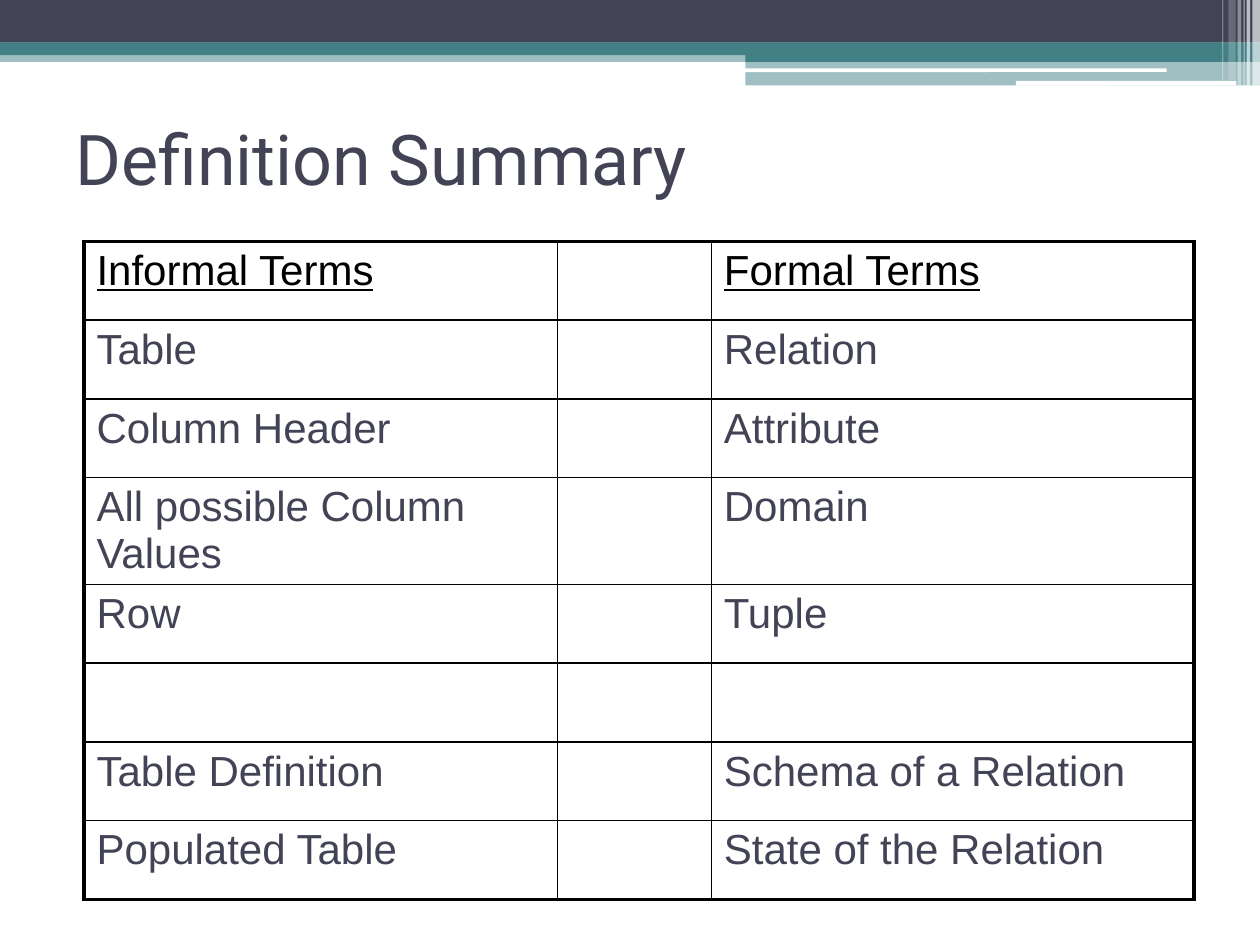
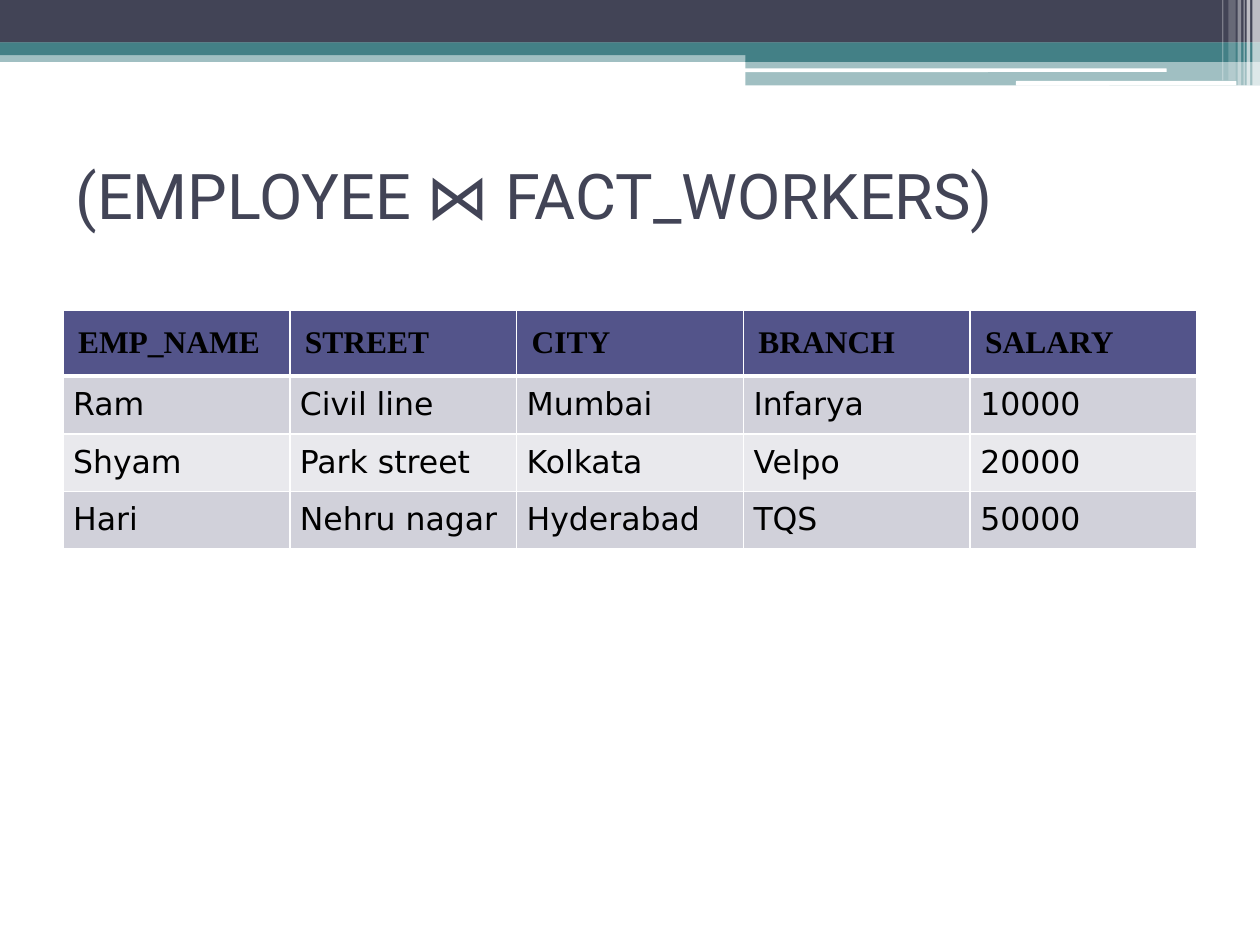
from dataclasses import dataclass
from typing import NamedTuple

from lxml import etree
from pptx import Presentation
from pptx.dml.color import RGBColor
from pptx.enum import shapes, text
from pptx.oxml import ns
from pptx.util import Pt

COLORS = {
    "slate": "424456",
    "teal": "438086",
    "white": "FFFFFF",
    "black": "000000",
    "indigo": "53548A",
    "band_dark": "D1D1DA",
    "band_light": "E9E9ED",
}
SLIDE_WIDTH, SLIDE_HEIGHT = 720, 540
TITLE_FONT = "Roboto"
TITLE_LEFT, TITLE_WIDTH, TITLE_HEIGHT = 36, 648, 84


class Band(NamedTuple):
    left: float
    top: float
    width: float
    height: float
    color: str
    opacity: int = 100
    rounded: bool = False


class Strip(NamedTuple):
    left: float
    width: float
    height: float
    opacity: int


class Edge(NamedTuple):
    color: str
    width: float


@dataclass
class TextStyle:
    font: str
    size: float
    color: str
    bold: bool = False
    underline: bool = False


@dataclass
class CellStyle:
    text: TextStyle
    margin_x: float
    margin_y: float
    fill: str | None = None


HEADER_BANDS = [
    Band(0, 28.8, SLIDE_WIDTH, 6.6, "teal", 50),
    Band(0, 0, SLIDE_WIDTH, 24.4, "slate"),
    Band(0, 24.3, SLIDE_WIDTH, 7.2, "teal"),
    Band(426, 28.2, 294, 7.2, "teal"),
    Band(426, 34.8, 294, 14, "teal", 50),
    Band(425.5, 39.1, 241.2, 2.1, "white", rounded=True),
    Band(580.5, 46.3, 126, 2.6, "white", rounded=True),
]
CORNER_STRIPS = [
    Strip(715.6, 4.4, 49, 65),
    Strip(712.4, 2, 49, 65),
    Strip(710.6, 0.7, 49, 60),
    Strip(707.2, 2, 49, 40),
    Strip(702, 4.2, 46, 20),
    Strip(698.4, 0.7, 46, 30),
]

TERMS = [
    ("Informal Terms", "Formal Terms"),
    ("Table", "Relation"),
    ("Column Header", "Attribute"),
    ("All possible Column Values", "Domain"),
    ("Row", "Tuple"),
    ("", ""),
    ("Table Definition", "Schema of a Relation"),
    ("Populated Table", "State of the Relation"),
]
WORKERS = [
    ("EMP_NAME", "STREET", "CITY", "BRANCH", "SALARY"),
    ("Ram", "Civil line", "Mumbai", "Infarya", "10000"),
    ("Shyam", "Park street", "Kolkata", "Velpo", "20000"),
    ("Hari", "Nehru nagar", "Hyderabad", "TQS", "50000"),
]

TERM_HEADING = CellStyle(TextStyle("Arial", 24, "black", underline=True), 7.2, 3.6)
TERM_ENTRY = CellStyle(TextStyle("Arial", 24, "slate"), 7.2, 3.6)
WORKER_HEADING = CellStyle(
    TextStyle("Times New Roman", 18, "black", bold=True), 8.6, 8.6, "indigo")
WORKER_TEXT = TextStyle("DejaVu Sans", 18, "black")
WORKER_ROWS = [CellStyle(WORKER_TEXT, 5.8, 5.8, fill)
               for fill in ("band_dark", "band_light")]


def rgb(color: str) -> RGBColor:
    return RGBColor.from_string(COLORS[color])


def add_run(paragraph, wording: str, style: TextStyle) -> None:
    run = paragraph.add_run()
    run.text = wording
    run.font.name = style.font
    run.font.size = Pt(style.size)
    run.font.bold = style.bold
    run.font.underline = style.underline
    run.font.color.rgb = rgb(style.color)


def add_band(slide, band: Band) -> None:
    kind = (shapes.MSO_SHAPE.ROUNDED_RECTANGLE if band.rounded
            else shapes.MSO_SHAPE.RECTANGLE)
    bar = slide.shapes.add_shape(
        kind, Pt(band.left), Pt(band.top), Pt(band.width), Pt(band.height))
    bar.shadow.inherit = False
    bar.line.fill.background()
    bar.fill.solid()
    bar.fill.fore_color.rgb = rgb(band.color)
    if band.opacity < 100:
        fill_color = bar.fill._xPr.find(".//" + ns.qn("a:srgbClr"))
        etree.SubElement(fill_color, ns.qn("a:alpha"), val=str(band.opacity * 1000))


def add_titled_slide(deck, heading: str, size: float, top: float,
                     bottom_margin: float = 3.6):
    """Add a slide with the shared header bands and a left-aligned title."""
    slide = deck.slides.add_slide(deck.slide_layouts[5])
    for band in HEADER_BANDS:
        add_band(slide, band)
    for strip in CORNER_STRIPS:
        add_band(slide, Band(strip.left, 0, strip.width, strip.height,
                             "white", strip.opacity))
    title = slide.shapes.title
    title.left, title.top = Pt(TITLE_LEFT), Pt(top)
    title.width, title.height = Pt(TITLE_WIDTH), Pt(TITLE_HEIGHT)
    frame = title.text_frame
    frame.auto_size = text.MSO_AUTO_SIZE.NONE
    frame.vertical_anchor = text.MSO_ANCHOR.MIDDLE
    frame.margin_bottom = Pt(bottom_margin)
    frame.paragraphs[0].alignment = text.PP_ALIGN.LEFT
    add_run(frame.paragraphs[0], heading, TextStyle(TITLE_FONT, size, "slate"))
    return slide


def set_borders(cell, left: Edge, right: Edge, top: Edge, bottom: Edge) -> None:
    properties = cell._tc.get_or_add_tcPr()
    sides = zip(("a:lnL", "a:lnR", "a:lnT", "a:lnB"), (left, right, top, bottom))
    for position, (tag, edge) in enumerate(sides):
        line = etree.Element(ns.qn(tag), w=str(Pt(edge.width)))
        fill = etree.SubElement(line, ns.qn("a:solidFill"))
        etree.SubElement(fill, ns.qn("a:srgbClr"), val=COLORS[edge.color])
        properties.insert(position, line)


def fill_cell(cell, wording: str, style: CellStyle) -> None:
    cell.margin_left = cell.margin_right = Pt(style.margin_x)
    cell.margin_top = cell.margin_bottom = Pt(style.margin_y)
    if style.fill:
        cell.fill.solid()
        cell.fill.fore_color.rgb = rgb(style.fill)
    else:
        cell.fill.background()
    if wording:
        add_run(cell.text_frame.paragraphs[0], wording, style.text)


def add_grid(slide, left: float, top: float, widths: list[float],
             heights: list[float]):
    grid = slide.shapes.add_table(
        len(heights), len(widths), Pt(left), Pt(top),
        Pt(sum(widths)), Pt(sum(heights))).table
    grid.first_row = grid.horz_banding = False
    for column, width in zip(grid.columns, widths):
        column.width = Pt(width)
    for row, height in zip(grid.rows, heights):
        row.height = Pt(height)
    return grid


def build_definition_summary(deck) -> None:
    slide = add_titled_slide(deck, "Definition Summary", 40, 48.2)
    heights = [61 if informal.startswith("All") else 45 for informal, _ in TERMS]
    grid = add_grid(slide, 48, 138, [270.7, 87.8, 275.8], heights)
    outer, inner = Edge("black", 2.25), Edge("black", 1)
    last_row, last_column = len(TERMS) - 1, 2
    for r, (informal, formal) in enumerate(TERMS):
        for c, wording in enumerate((informal, "", formal)):
            cell = grid.cell(r, c)
            fill_cell(cell, wording, TERM_ENTRY if r else TERM_HEADING)
            set_borders(cell,
                        left=inner if c else outer,
                        right=outer if c == last_column else inner,
                        top=inner if r else outer,
                        bottom=outer if r == last_row else inner)


def build_join_result(deck) -> None:
    slide = add_titled_slide(deck, "(EMPLOYEE ⋈ FACT_WORKERS)", 36, 90,
                             bottom_margin=45)
    grid = add_grid(slide, 36, 177.4, [129.6] * 5, [37.5, 33, 33, 33])
    thin, thick = Edge("white", 1), Edge("white", 3)
    for r, record in enumerate(WORKERS):
        style = WORKER_ROWS[(r - 1) % 2] if r else WORKER_HEADING
        for c, wording in enumerate(record):
            cell = grid.cell(r, c)
            fill_cell(cell, wording, style)
            set_borders(cell, left=thin, right=thin,
                        top=thick if r == 1 else thin,
                        bottom=thin if r else thick)


def main() -> None:
    deck = Presentation()
    deck.slide_width, deck.slide_height = Pt(SLIDE_WIDTH), Pt(SLIDE_HEIGHT)
    build_definition_summary(deck)
    build_join_result(deck)
    deck.save("out.pptx")


if __name__ == "__main__":
    main()
